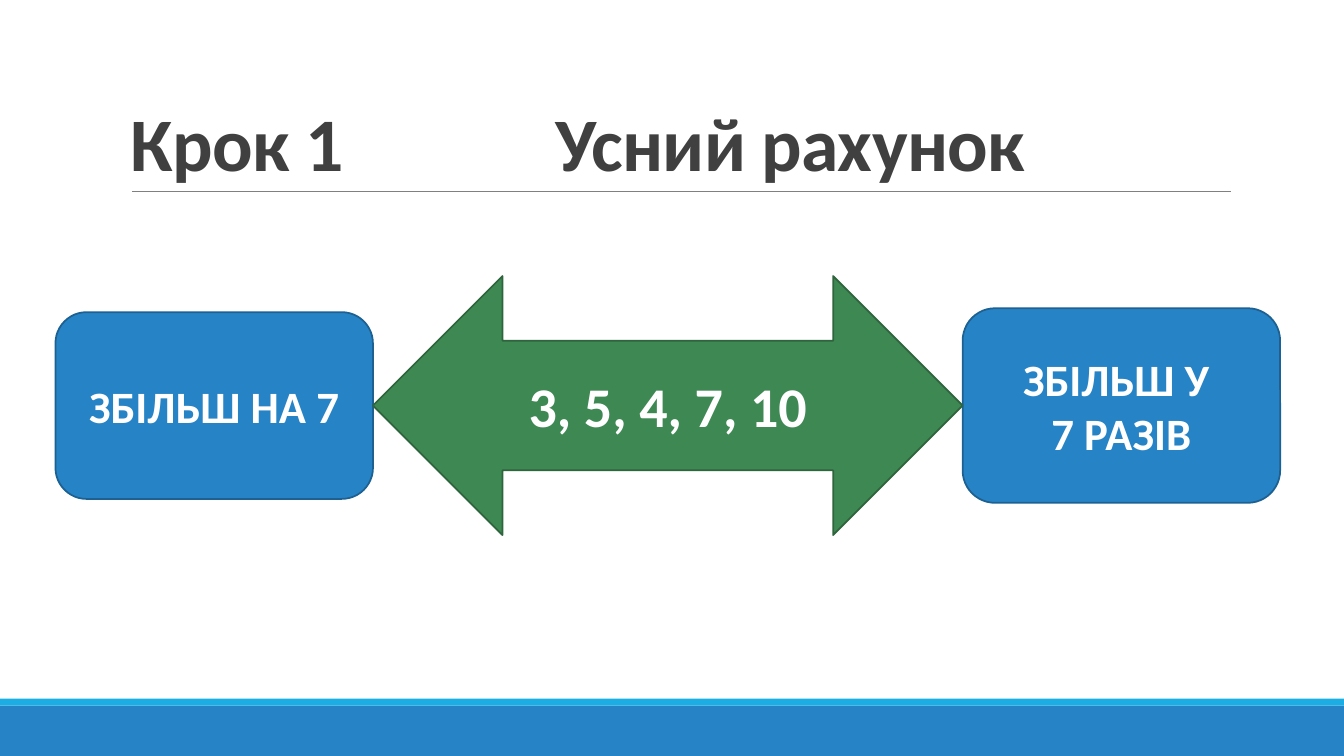
"""Build a mental arithmetic slide with two task boxes joined by an arrow."""
from dataclasses import dataclass

from lxml import etree
from pptx import Presentation
from pptx.dml.color import RGBColor
from pptx.enum import shapes, text
from pptx.oxml import ns
from pptx.util import Pt

COLORS = {
    "blue": "2683C6",
    "blue_edge": "1C6192",
    "cyan": "1CADE4",
    "green": "3E8853",
    "green_edge": "2E653D",
    "rule": "808080",
    "title": "404040",
    "white": "FFFFFF",
}
FONT = "Calibri"
WIDTH, HEIGHT = 960, 540
KIND = shapes.MSO_SHAPE


@dataclass(frozen=True)
class Block:
    kind: int
    left: float
    top: float
    width: float
    height: float
    fill: str
    edge: str = ""
    lines: tuple[str, ...] = ()
    size: float = 32


BLOCKS = (
    Block(KIND.RECTANGLE, 0, 504, WIDTH, 36, "blue"),
    Block(KIND.RECTANGLE, 0, 499, WIDTH, 5, "cyan"),
    Block(KIND.ROUNDED_RECTANGLE, 39.6, 223, 226.8, 133.4,
          "blue", "blue_edge", ("ЗБІЛЬШ НА 7",)),
    Block(KIND.ROUNDED_RECTANGLE, 687.6, 220.2, 226.8, 139,
          "blue", "blue_edge", ("ЗБІЛЬШ У ", "7 РАЗІВ")),
    Block(KIND.LEFT_RIGHT_ARROW, 266.4, 197.2, 421.2, 185,
          "green", "green_edge", ("3, 5, 4, 7, 10",), 40),
)


def color(name: str) -> RGBColor:
    return RGBColor.from_string(COLORS[name])


def add_span(para, words: str, size: float, ink: str):
    span = para.add_run()
    span.text = words
    span.font.name = FONT
    span.font.size = Pt(size)
    span.font.bold = True
    span.font.color.rgb = color(ink)
    return span


def add_block(page, block: Block) -> None:
    box = page.shapes.add_shape(block.kind, Pt(block.left), Pt(block.top),
                                Pt(block.width), Pt(block.height))
    box.shadow.inherit = False
    box.fill.solid()
    box.fill.fore_color.rgb = color(block.fill)
    if block.edge:
        box.line.color.rgb = color(block.edge)
        box.line.width = Pt(1.25)
    else:
        box.line.fill.background()
    frame = box.text_frame
    frame.word_wrap = True
    frame.vertical_anchor = text.MSO_ANCHOR.MIDDLE
    for index, words in enumerate(block.lines):
        para = frame.add_paragraph() if index else frame.paragraphs[0]
        para.alignment = text.PP_ALIGN.CENTER
        add_span(para, words, block.size, "white")


def add_rule(page) -> None:
    rule = page.shapes.add_connector(shapes.MSO_CONNECTOR.STRAIGHT,
                                     Pt(94.3), Pt(136.8), Pt(879.1), Pt(136.8))
    rule.line.color.rgb = color("rule")
    rule.line.width = Pt(0.5)
    etree.SubElement(rule._element.spPr, ns.qn("a:effectLst"))


def add_title(page) -> None:
    box = page.shapes.add_textbox(Pt(86.4), Pt(22.3), Pt(792), Pt(114.5))
    frame = box.text_frame
    frame.word_wrap = True
    frame.vertical_anchor = text.MSO_ANCHOR.BOTTOM
    para = frame.paragraphs[0]
    para.line_spacing = 0.85
    tabs = etree.SubElement(para._p.get_or_add_pPr(), ns.qn("a:tabLst"))
    etree.SubElement(tabs, ns.qn("a:tab"), pos=str(Pt(303)), algn="l")
    span = add_span(para, "Крок 1\tУсний рахунок", 54, "title")
    span.font._element.set("spc", "-50")


def main() -> None:
    deck = Presentation()
    deck.slide_width, deck.slide_height = Pt(WIDTH), Pt(HEIGHT)
    page = deck.slides.add_slide(deck.slide_layouts[6])
    bands, tasks = BLOCKS[:2], BLOCKS[2:]
    for band in bands:
        add_block(page, band)
    add_rule(page)
    add_title(page)
    for task in tasks:
        add_block(page, task)
    deck.save("out.pptx")


if __name__ == "__main__":
    main()
